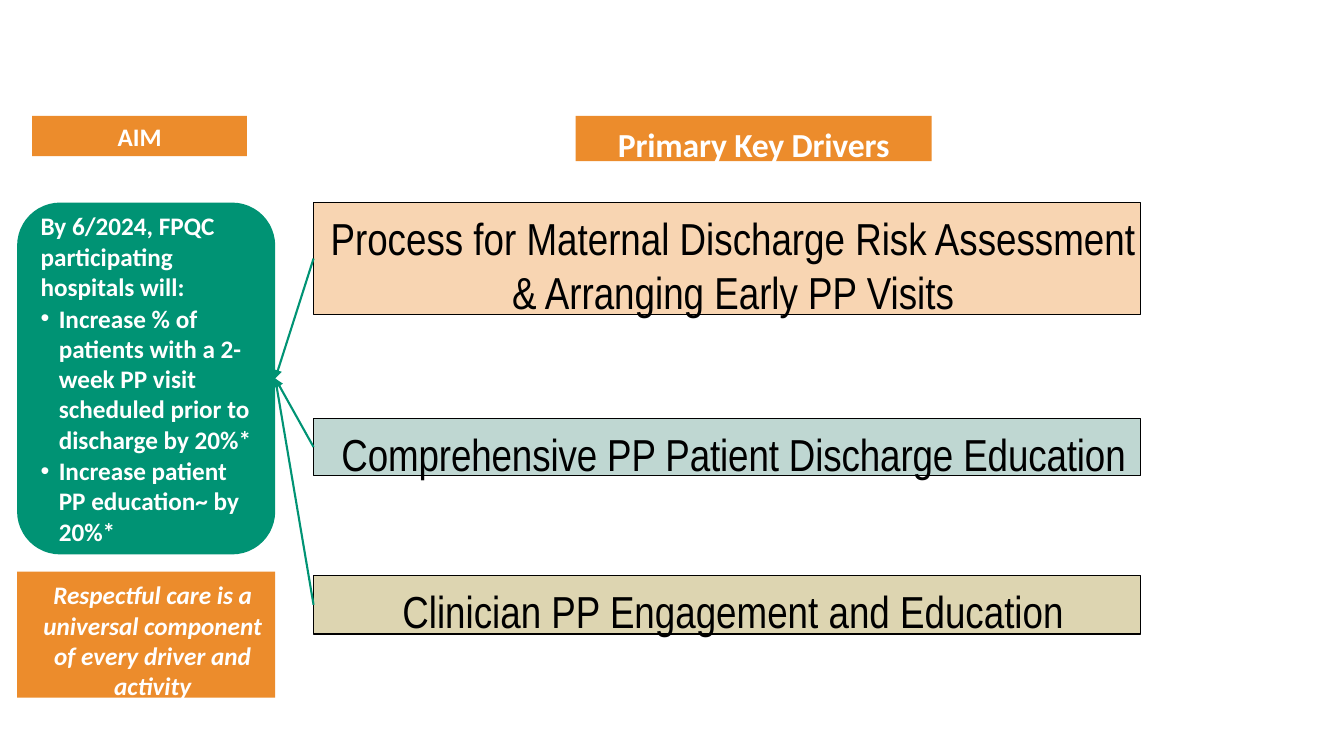
"""Build the key driver diagram slide for postpartum discharge care."""
from lxml.etree import SubElement
from pptx import Presentation
from pptx.dml.color import RGBColor
from pptx.enum.shapes import MSO_CONNECTOR as Connector, MSO_SHAPE as Shape
from pptx.enum.text import MSO_ANCHOR as Anchor, MSO_AUTO_SIZE as AutoSize, PP_ALIGN as Align
from pptx.oxml.ns import qn
from pptx.util import Inches, Pt

WHITE = RGBColor(0xFF, 0xFF, 0xFF)
BLACK = RGBColor(0x00, 0x00, 0x00)
ORANGE = RGBColor(0xEC, 0x8C, 0x2C)
GREEN = RGBColor(0x00, 0x93, 0x74)
PEACH = RGBColor(0xF8, 0xD5, 0xB2)
TEAL = RGBColor(0xBF, 0xD7, 0xD2)
SAND = RGBColor(0xDD, 0xD5, 0xB1)

AIM_INTRO = "By 6/2024, FPQC participating hospitals will:"
AIM_GOALS = [
    "Increase % of patients with a 2-week PP visit scheduled prior to discharge by 20%*",
    "Increase patient PP education~ by 20%*",
]
RESPECTFUL_CARE = "Respectful care is a universal component of every driver and activity"
DRIVERS = [
    ("Process for Maternal Discharge Risk Assessment & Arranging Early PP Visits",
     2.01, 1.11, PEACH, 0),
    ("Comprehensive PP Patient Discharge Education", 4.15, 0.57, TEAL, -0.1),
    ("Clinician PP Engagement and Education", 5.71, 0.58, SAND, 0),
]

AIM_LEFT, AIM_TOP, AIM_WIDTH, AIM_HEIGHT = 0.17, 2.01, 2.56, 3.49
DRIVER_LEFT, DRIVER_WIDTH = 3.11, 8.2


def add_box(page, place, fill, outline=None, kind=Shape.RECTANGLE, grow=True):
    box = page.shapes.add_shape(kind, *map(Inches, place))
    box.shadow.inherit = False
    box.fill.solid()
    box.fill.fore_color.rgb = fill
    if outline is None:
        box.line.fill.background()
    else:
        box.line.color.rgb = outline
        box.line.width = Pt(0.96)
    frame = box.text_frame
    frame.word_wrap = True
    frame.vertical_anchor = Anchor.MIDDLE
    if grow:
        frame.vertical_anchor = Anchor.TOP
        frame.auto_size = AutoSize.SHAPE_TO_FIT_TEXT
        frame.margin_left = frame.margin_right = frame.margin_bottom = 0
        frame.margin_top = Inches(0.08)
    return box


def write(box, text, size=18, font="Calibri", color=WHITE, bold=True, italic=False,
          align=Align.CENTER, margin=0, hanging=0, bullet=None, spacing=0):
    frame = box.text_frame
    para = frame.paragraphs[0]
    if para.runs:
        para = frame.add_paragraph()
        para.space_before = Pt(1)
    para.alignment = align
    properties = para._p.get_or_add_pPr()
    properties.set("marL", str(Inches(margin)))
    properties.set("indent", str(Inches(-hanging)))
    if bullet:
        SubElement(properties, qn("a:buFont")).set("typeface", "Arial")
        SubElement(properties, qn("a:buChar")).set("char", bullet)
    span = para.add_run()
    span.text = text
    span.font.size = Pt(size)
    span.font.name = font
    span.font.color.rgb = color
    span.font.bold = bold
    span.font.italic = italic
    if spacing:
        span.font._element.set("spc", str(round(spacing * 100)))


def add_arrow(page, start, end):
    arrow = page.shapes.add_connector(Connector.STRAIGHT, *map(Inches, start + end))
    arrow.line.color.rgb = GREEN
    arrow.line.width = Pt(1.5)
    SubElement(arrow.line._get_or_add_ln(), qn("a:tailEnd")).set("type", "triangle")
    SubElement(arrow._element.spPr, qn("a:effectLst"))


def main():
    deck = Presentation()
    deck.slide_width, deck.slide_height = Inches(13.33), Inches(7.5)
    page = deck.slides.add_slide(deck.slide_layouts[6])

    write(add_box(page, (0.32, 1.15, 2.13, 0.4), ORANGE, grow=False), "AIM")
    write(add_box(page, (5.71, 1.15, 3.53, 0.45), ORANGE),
          "Primary Key Drivers", size=24, spacing=-0.1)
    write(add_box(page, (AIM_LEFT, 5.67, AIM_WIDTH, 1.25), ORANGE),
          RESPECTFUL_CARE, italic=True, margin=0.13)

    aim = add_box(page, (AIM_LEFT, AIM_TOP, AIM_WIDTH, AIM_HEIGHT), GREEN,
                  kind=Shape.ROUNDED_RECTANGLE, grow=False)
    write(aim, AIM_INTRO, align=Align.LEFT, margin=0.01)
    for goal in AIM_GOALS:
        write(aim, goal, align=Align.LEFT, margin=0.19, hanging=0.18, bullet="•")

    aim_edge = (AIM_LEFT + AIM_WIDTH, AIM_TOP + AIM_HEIGHT / 2)
    for text, top, height, fill, spacing in DRIVERS:
        driver = add_box(page, (DRIVER_LEFT, top, DRIVER_WIDTH, height), fill, outline=BLACK)
        write(driver, text, size=32, font="Arial Narrow", color=BLACK, bold=False,
              margin=0.13, spacing=spacing)
        add_arrow(page, (DRIVER_LEFT, top + height / 2), aim_edge)

    deck.save("out.pptx")


if __name__ == "__main__":
    main()
